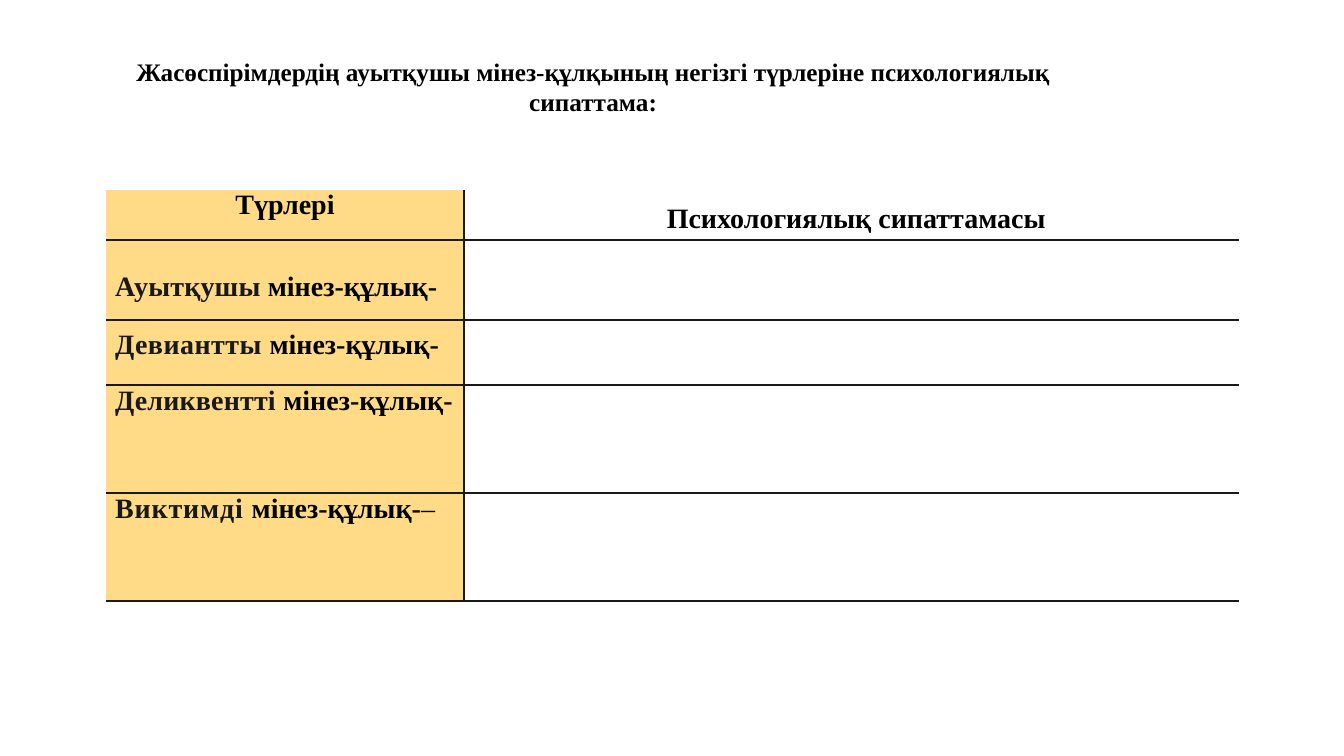
from pptx import Presentation
from pptx.dml.color import RGBColor
from pptx.enum.text import MSO_ANCHOR, MSO_AUTO_SIZE, PP_ALIGN
from pptx.oxml.ns import qn
from pptx.util import Pt
from lxml.etree import SubElement

TITLE = "Жасөспірімдердің ауытқушы мінез-құлқының негізгі түрлеріне психологиялық сипаттама:"
HEADS = ["Түрлері", "Психологиялық сипаттамасы"]
NOUN = "мінез-құлық-"
KINDS = [
    ("Ауытқушы ", 10, 22, ""),
    ("Девиантты ", 30, 6.5, ""),
    ("Деликвентті ", 10, 0, ""),
    ("Виктимді ", 60, 0, "–"),
]
FONT, BLACK, DARK, GOLD = "Times New Roman", "000000", "191919", "FFDB88"
WIDTHS = [256, 553.5]
HEIGHTS = [36.3, 57, 46.5, 77, 77]
LEFT, TOP = 75.6, 135.4
INDENT = 6.6


def color(code):
    return RGBColor.from_string(code)


def style(run, size, code=BLACK, bold=True, gap=0):
    font = run.font
    font.name, font.size, font.bold = FONT, Pt(size), bold
    font.color.rgb = color(code)
    if gap:
        run._r.get_or_add_rPr().set("spc", str(gap))


def edge(cell, side, shown):
    line = SubElement(cell._tc.get_or_add_tcPr(), qn("a:ln" + side), w=str(Pt(1.5)))
    if shown:
        fill = SubElement(line, qn("a:solidFill"))
        SubElement(fill, qn("a:srgbClr"), val=DARK)
    else:
        SubElement(line, qn("a:noFill"))


def pad(cell, top):
    cell.margin_left = cell.margin_right = cell.margin_bottom = 0
    cell.margin_top = Pt(top)


def indent(para):
    props = para._p.get_or_add_pPr()
    props.set("marL", str(Pt(INDENT)))
    props.set("indent", "0")


deck = Presentation()
deck.slide_width, deck.slide_height = Pt(960), Pt(540)
slide = deck.slides.add_slide(deck.slide_layouts[5])

title = slide.shapes.title
title.left, title.top, title.width, title.height = Pt(73.4), Pt(36.7), Pt(700.6), Pt(51)
frame = title.text_frame
frame.text = TITLE
frame.word_wrap = True
frame.auto_size = MSO_AUTO_SIZE.NONE
frame.vertical_anchor = MSO_ANCHOR.TOP
para = frame.paragraphs[0]
para.alignment = PP_ALIGN.CENTER
style(para.runs[0], 18)

table = slide.shapes.add_table(
    len(HEIGHTS), len(WIDTHS), Pt(LEFT), Pt(TOP), Pt(sum(WIDTHS)), Pt(sum(HEIGHTS))
).table
table.first_row = table.horz_banding = False
for col, width in zip(table.columns, WIDTHS):
    col.width = Pt(width)
for row, height in zip(table.rows, HEIGHTS):
    row.height = Pt(height)

for r in range(len(HEIGHTS)):
    for c in range(len(WIDTHS)):
        cell = table.cell(r, c)
        for side, shown in zip("LRTB", (c == 1, c == 0, r > 0, True)):
            edge(cell, side, shown)
        if c == 0:
            cell.fill.solid()
            cell.fill.fore_color.rgb = color(GOLD)
        else:
            cell.fill.background()

for c, head in enumerate(HEADS):
    cell = table.cell(0, c)
    pad(cell, 6.5 * c)
    para = cell.text_frame.paragraphs[0]
    para.text = head
    para.alignment = PP_ALIGN.CENTER
    style(para.runs[0], 20)
    if c:
        indent(para)
        para.line_spacing, para.space_before = 1.15, Pt(4.8)

for r, (kind, gap, top, dash) in enumerate(KINDS, 1):
    cell = table.cell(r, 0)
    pad(cell, top)
    para = cell.text_frame.paragraphs[0]
    indent(para)
    para.text = kind
    style(para.runs[0], 20, DARK, gap=gap)
    for text, bold in ((NOUN, True), (dash, False)):
        if text:
            run = para.add_run()
            run.text = text
            style(run, 20, bold=bold)

deck.save("out.pptx")
